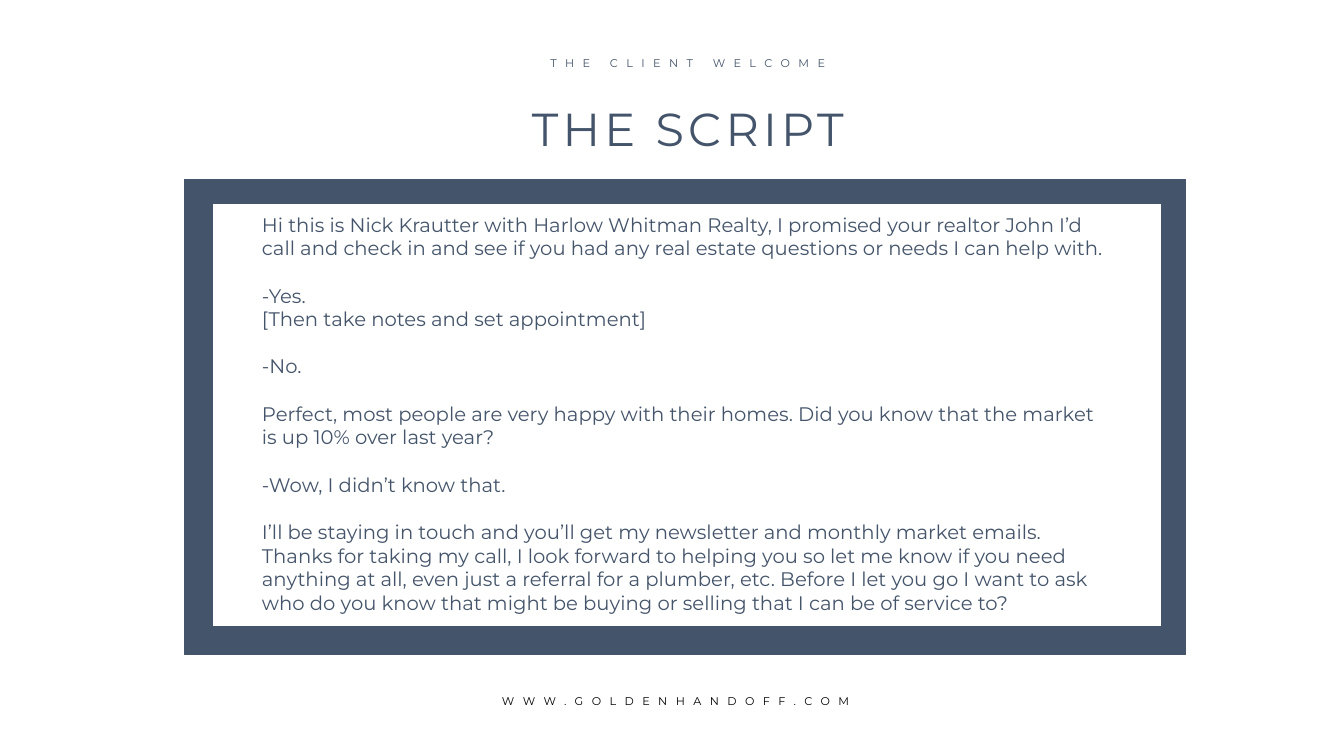
import pptx
import pptx.util
import pptx.dml.color
import pptx.enum.shapes
import pptx.enum.text

Pt = pptx.util.Pt
SLATE = pptx.dml.color.RGBColor(0x44, 0x54, 0x6A)
WHITE = pptx.dml.color.RGBColor(0xFF, 0xFF, 0xFF)
BLACK = pptx.dml.color.RGBColor(0x00, 0x00, 0x00)
LEFT = pptx.enum.text.PP_ALIGN.LEFT
CENTER = pptx.enum.text.PP_ALIGN.CENTER
FONT = "Montserrat"
BLANK_LINE = 17

SCRIPT_BLOCKS = [
    ["Hi this is Nick Krautter with Harlow Whitman Realty, I promised your realtor John I’d call "
     "and check in and see if you had any real estate questions or needs I can help with."],
    ["-Yes.", "[Then take notes and set appointment]"],
    ["-No."],
    ["Perfect, most people are very happy with their homes. Did you know that the market "
     "is up 10% over last year?"],
    ["-Wow, I didn’t know that."],
    ["I’ll be staying in touch and you’ll get my newsletter and monthly market emails. "
     "Thanks for taking my call, I look forward to helping you so let me know if you need "
     "anything at all, even just a referral for a plumber, etc. Before I let you go I want to ask "
     "who do you know that might be buying or selling that I can be of service to?"],
]


def format_paragraph(paragraph, size, color, align, spacing=0):
    paragraph.alignment = align
    for run in paragraph.runs:
        run.font.name = FONT
        run.font.size = Pt(size)
        run.font.color.rgb = color
        if spacing:
            run.font._element.set("spc", str(spacing * 100))


def prepare_frame(frame):
    frame.word_wrap = True
    frame.auto_size = pptx.enum.text.MSO_AUTO_SIZE.SHAPE_TO_FIT_TEXT
    frame.vertical_anchor = pptx.enum.text.MSO_ANCHOR.TOP


def add_panel(slide, left, top, width, height, fill):
    panel = slide.shapes.add_shape(
        pptx.enum.shapes.MSO_SHAPE.RECTANGLE, Pt(left), Pt(top), Pt(width), Pt(height))
    panel.shadow.inherit = False
    panel.fill.solid()
    panel.fill.fore_color.rgb = fill
    panel.line.color.rgb = SLATE
    panel.line.width = Pt(1)


def place_title(slide, text, left, top, width, height):
    title = slide.shapes.title
    title.left, title.top, title.width, title.height = Pt(left), Pt(top), Pt(width), Pt(height)
    title.text_frame.text = text
    prepare_frame(title.text_frame)
    format_paragraph(title.text_frame.paragraphs[0], 33, SLATE, CENTER, 3)


def add_spaced_label(slide, text, left, top, width, color, align):
    label = slide.shapes.add_textbox(Pt(left), Pt(top), Pt(width), Pt(17.3))
    label.text_frame.text = text
    prepare_frame(label.text_frame)
    format_paragraph(label.text_frame.paragraphs[0], 8, color, align, 6)


def add_call_script(slide, blocks, left, top, width, height):
    frame = slide.shapes.add_textbox(Pt(left), Pt(top), Pt(width), Pt(height)).text_frame
    frame.text = "\n".join(line for block in blocks for line in block)
    prepare_frame(frame)
    paragraphs = iter(frame.paragraphs)
    for block_index, block in enumerate(blocks):
        for line_index in range(len(block)):
            paragraph = next(paragraphs)
            if block_index and line_index == 0:
                paragraph.space_before = Pt(BLANK_LINE)
            format_paragraph(paragraph, 14, SLATE, LEFT)


def main():
    deck = pptx.Presentation()
    deck.slide_width, deck.slide_height = Pt(960), Pt(540)
    slide = deck.slides.add_slide(deck.slide_layouts.get_by_name("Title Only"))

    add_panel(slide, 131.8, 128.2, 715, 339.1, SLATE)
    place_title(slide, "THE SCRIPT", 202.3, 68.4, 578.2, 47.5)
    add_spaced_label(slide, "WWW.GOLDENHANDOFF.COM", 351.4, 492.5, 279.4, BLACK, LEFT)
    add_spaced_label(slide, "THE CLIENT WELCOME", 367.9, 36.7, 247, SLATE, CENTER)
    add_panel(slide, 151.9, 145.4, 678.2, 302.4, WHITE)
    add_call_script(slide, SCRIPT_BLOCKS, 180, 148.3, 618.5, 295.9)

    deck.save("out.pptx")


if __name__ == "__main__":
    main()
